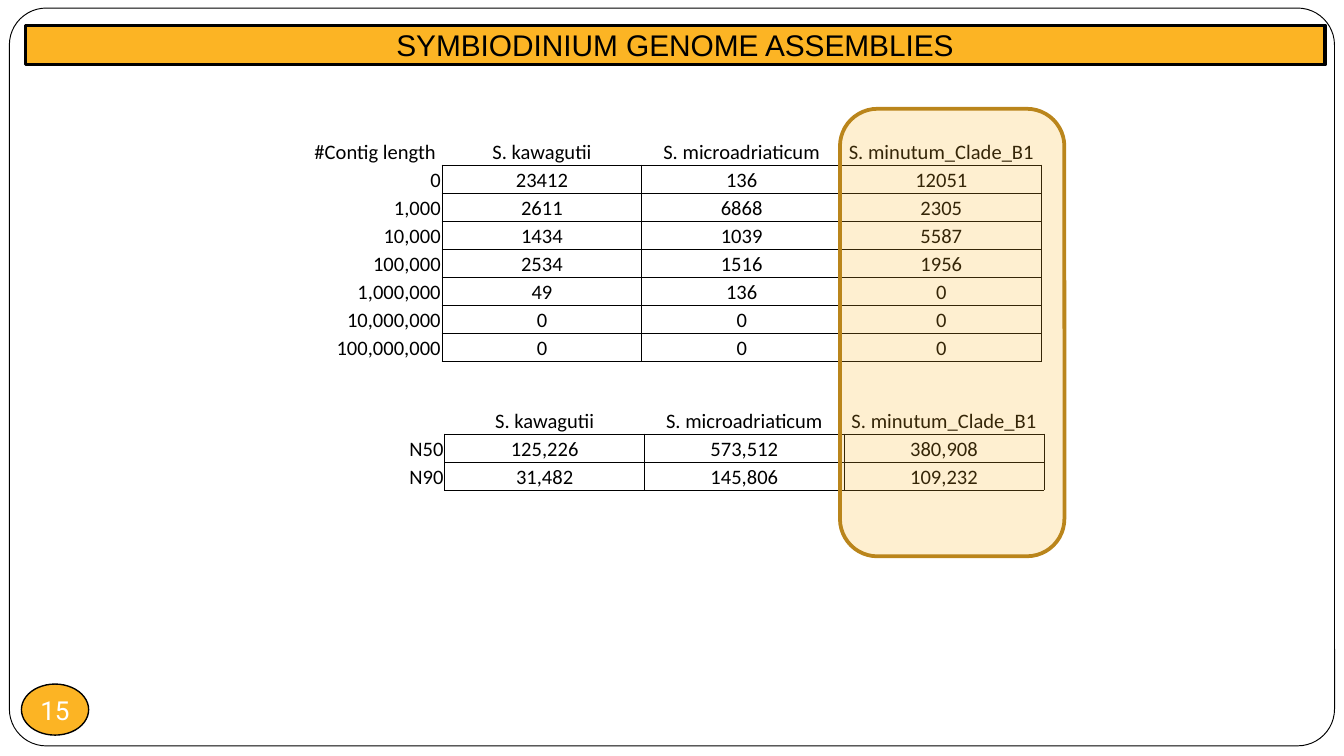
from lxml.etree import SubElement
from pptx import Presentation
from pptx.dml.color import RGBColor
from pptx.enum.shapes import MSO_SHAPE
from pptx.enum.text import MSO_ANCHOR, MSO_AUTO_SIZE, PP_ALIGN
from pptx.oxml.ns import qn
from pptx.util import Inches, Pt

BLACK = RGBColor(0, 0, 0)
WHITE = RGBColor(0xFF, 0xFF, 0xFF)
GOLD = RGBColor(0xFC, 0xB4, 0x24)
BROWN = RGBColor(0xBA, 0x85, 0x1B)

# The slide is a grid of square cells, 100 columns wide
UNIT = Inches(0.1)
COLS, ROWS = 100, 56.25
LABEL, VALUE, LINE = 9.6, 14.86, 2.09  # table column widths and row height
PLAIN = "{2D5ABB26-0587-4C30-8999-92F81FD0307C}"  # table style without lines

SPECIES = ["S. kawagutii", "S. microadriaticum", "S. minutum_Clade_B1"]
LENGTHS = [
    ["#Contig length", *SPECIES],
    ["0", "23412", "136", "12051"],
    ["1,000", "2611", "6868", "2305"],
    ["10,000", "1434", "1039", "5587"],
    ["100,000", "2534", "1516", "1956"],
    ["1,000,000", "49", "136", "0"],
    ["10,000,000", "0", "0", "0"],
    ["100,000,000", "0", "0", "0"],
]
SCORES = [
    ["", *SPECIES],
    ["N50", "125,226", "573,512", "380,908"],
    ["N90", "31,482", "145,806", "109,232"],
]


def grid(*cells):
    return [round(n * UNIT) for n in cells]


def apply(item, form):
    for name, value in form.items():
        setattr(item, name, value)


def write(frame, text, align, size, font, color):
    para = frame.paragraphs[0]
    para.alignment = align
    if not text:
        SubElement(para._p, qn("a:endParaRPr"), sz=str(size * 100))
        return
    run = para.add_run()
    run.text = text
    apply(run.font, {"size": Pt(size), "name": font, "bold": False})
    run.font.color.rgb = color


def paint(shape, fill, line, width):
    shape.fill.solid()
    shape.fill.fore_color.rgb = fill
    shape.line.color.rgb = line
    shape.line.width = Pt(width)


def draw(slide, kind, box, fill, line, width):
    shape = slide.shapes.add_shape(kind, *grid(*box))
    shape.shadow.inherit = False
    paint(shape, fill, line, width)
    return shape


def frame(slide, box):
    card = draw(slide, MSO_SHAPE.ROUNDED_RECTANGLE, box, WHITE, BLACK, 0.5)
    card.adjustments[0] = 0.05


def badge(slide, box, text):
    oval = draw(slide, MSO_SHAPE.OVAL, box, GOLD, BLACK, 0.75)
    apply(oval.text_frame, {
        "margin_left": 0, "margin_right": 0, "margin_top": 0,
        "margin_bottom": 0, "word_wrap": False,
        "vertical_anchor": MSO_ANCHOR.MIDDLE})
    write(oval.text_frame, text, PP_ALIGN.CENTER, 14, "Roboto", WHITE)


def border(cell, sides):
    for side in sides:
        edge = SubElement(cell._tc.get_or_add_tcPr(), qn(f"a:ln{side}"),
                          w=str(Pt(0.5)))
        fill = SubElement(edge, qn("a:solidFill"))
        SubElement(fill, qn("a:srgbClr"), val=str(BLACK))


def table(slide, left, top, data):
    size = LABEL + VALUE * len(SPECIES), LINE * len(data)
    part = slide.shapes.add_table(len(data), len(data[0]),
                                  *grid(left, top, *size))
    body = part.table
    apply(body, {"first_row": False, "horz_banding": False})
    body._tbl.tblPr.find(qn("a:tableStyleId")).text = PLAIN
    for c, col in enumerate(body.columns):
        col.width = grid(VALUE if c else LABEL)[0]
    for r, row in enumerate(data):
        body.rows[r].height = grid(LINE)[0]
        for c, text in enumerate(row):
            cell = body.cell(r, c)
            # Values are boxed; headings and labels only touch the box
            border(cell, "LRTB" if r and c else "R" if r else "B" if c else "")
            cell.fill.background()
            apply(cell, {
                "margin_left": Inches(0.01), "margin_right": Inches(0.01),
                "margin_top": Inches(0.01), "margin_bottom": 0,
                "vertical_anchor": MSO_ANCHOR.BOTTOM})
            align = (PP_ALIGN.CENTER if c
                     else PP_ALIGN.RIGHT if r else PP_ALIGN.LEFT)
            write(cell.text_frame, text, align, 11, "Calibri", BLACK)


def banner(slide, box, text):
    title = slide.shapes.title
    left, top, width, height = grid(*box)
    apply(title, {"left": left, "top": top, "width": width, "height": height})
    shape = SubElement(title._element.spPr, qn("a:prstGeom"), prst="roundRect")
    SubElement(shape, qn("a:avLst"))
    paint(title, GOLD, BLACK, 2)
    apply(title.text_frame, {
        "auto_size": MSO_AUTO_SIZE.NONE, "word_wrap": True,
        "vertical_anchor": MSO_ANCHOR.MIDDLE})
    write(title.text_frame, text, PP_ALIGN.CENTER, 16, "Arial", BLACK)
    slide.shapes._spTree.append(title._element)  # bring above the frame


def marker(slide, box):
    pane = draw(slide, MSO_SHAPE.ROUNDED_RECTANGLE, box, GOLD, BROWN, 2)
    color = pane._element.spPr.find(qn("a:solidFill"))[0]
    SubElement(color, qn("a:alpha"), val="21000")


def main():
    deck = Presentation()
    deck.slide_width, deck.slide_height = grid(COLS, ROWS)
    slide = deck.slides.add_slide(deck.slide_layouts[5])

    # Page frame and number
    frame(slide, (0.7, 0.6, 98.6, 54.9))
    badge(slide, (1.6, 50.9, 5, 3.8), "15")

    # Contig counts and assembly scores
    table(slide, 23.3, 10.2, LENGTHS)
    table(slide, 23.5, 30.2, SCORES)

    # Title bar and highlighted species
    banner(slide, (1.9, 1.9, 96.7, 2.9), "SYMBIODINIUM GENOME ASSEMBLIES")
    marker(slide, (62.5, 8.1, 16.7, 33.3))

    deck.save("out.pptx")


if __name__ == "__main__":
    main()
